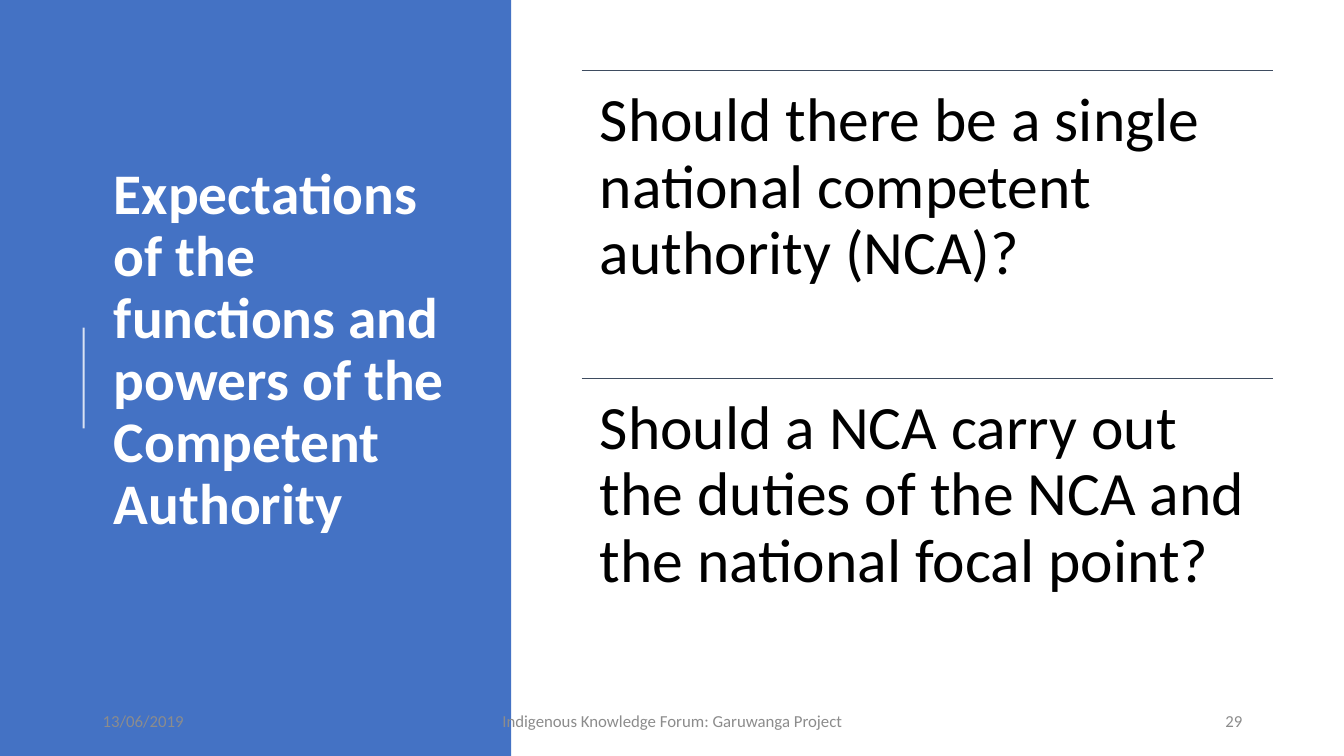
import pptx
import pptx.dml.color
import pptx.enum.shapes
import pptx.enum.text
import pptx.oxml.ns
import pptx.util
from lxml import etree

Inches = pptx.util.Inches
Pt = pptx.util.Pt
Align = pptx.enum.text.PP_ALIGN
Anchor = pptx.enum.text.MSO_ANCHOR
qn = pptx.oxml.ns.qn


def color(code):
    return pptx.dml.color.RGBColor.from_string(code)


class Page:
    font = "Calibri"
    blue, white, black = "4472C4", "FFFFFF", "000000"
    rule, gray = "3E4C60", "8C8C8C"

    def __init__(self, deck):
        self.slide = deck.slides.add_slide(deck.slide_layouts[5])
        self.shapes = self.slide.shapes

    def panel(self, x, y, w, h):
        box = self.shapes.add_shape(
            pptx.enum.shapes.MSO_SHAPE.RECTANGLE,
            Inches(x), Inches(y), Inches(w), Inches(h))
        box.shadow.inherit = False
        box.fill.solid()
        box.fill.fore_color.rgb = color(self.blue)
        box.line.fill.background()

    def line(self, x1, y1, x2, y2, tint, width, alpha=None):
        link = self.shapes.add_connector(
            pptx.enum.shapes.MSO_CONNECTOR.STRAIGHT,
            Inches(x1), Inches(y1), Inches(x2), Inches(y2))
        link.line.color.rgb = color(tint)
        link.line.width = Pt(width)
        if alpha:
            fill = link.element.find(".//" + qn("a:srgbClr"))
            etree.SubElement(fill, qn("a:alpha"), val=str(alpha * 1000))
        etree.SubElement(link.element.spPr, qn("a:effectLst"))

    def fill(self, frame, text, size, tint, bold=False, align=Align.LEFT,
             anchor=Anchor.TOP, space=1.0):
        frame.word_wrap = True
        frame.auto_size = pptx.enum.text.MSO_AUTO_SIZE.NONE
        frame.vertical_anchor = anchor
        para = frame.paragraphs[0]
        para.alignment = align
        para.line_spacing = space
        run = para.add_run()
        run.text = text
        run.font.name = self.font
        run.font.size = Pt(size)
        run.font.bold = bold
        run.font.color.rgb = color(tint)

    def title(self, x, y, w, h, text):
        head = self.shapes.title
        head.left, head.top = Inches(x), Inches(y)
        head.width, head.height = Inches(w), Inches(h)
        # Bring the title in front of the panel
        head.element.getparent().append(head.element)
        frame = head.text_frame
        frame.margin_bottom = Inches(0.66)
        self.fill(frame, text, 41, self.white, bold=True,
                  anchor=Anchor.MIDDLE, space=0.9)

    def text(self, x, y, w, h, text, size, tint, inset=None, **style):
        frame = self.shapes.add_textbox(
            Inches(x), Inches(y), Inches(w), Inches(h)).text_frame
        if inset:
            frame.margin_left = frame.margin_right = Inches(inset)
            frame.margin_top = frame.margin_bottom = Inches(inset)
        self.fill(frame, text, size, tint, **style)

    def foot(self, x, w, text, align):
        self.text(x, 6.95, w, 0.4, text, 12, self.gray,
                  align=align, anchor=Anchor.MIDDLE)


def main():
    deck = pptx.Presentation()
    deck.slide_width, deck.slide_height = Inches(13.33), Inches(7.5)
    page = Page(deck)

    # Title panel
    page.panel(0, 0, 5.07, 7.5)
    page.line(0.83, 4.25, 0.83, 3.25, page.white, 1.5, alpha=80)
    page.title(1.03, 0.78, 3.69, 6.02,
               "Expectations of the functions and powers of the "
               "Competent Authority")

    # Questions, each under a rule
    asks = [
        "Should there be a single national competent authority (NCA)?",
        "Should a NCA carry out the duties of the NCA and the national "
        "focal point?",
    ]
    left, wide, high = 5.77, 6.86, 3.05
    for i, ask in enumerate(asks):
        top = 0.7 + i * high
        page.line(left, top, left + wide, top, page.rule, 0.5)
        page.text(left, top, wide, high, ask, 44, page.black,
                  inset=0.18, space=0.9)

    # Footer
    page.foot(0.92, 3, "13/06/2019", Align.LEFT)
    page.foot(4.42, 4.5, "Indigenous Knowledge Forum: Garuwanga Project",
              Align.CENTER)
    page.foot(9.42, 3, "29", Align.RIGHT)

    deck.save("out.pptx")


if __name__ == "__main__":
    main()
